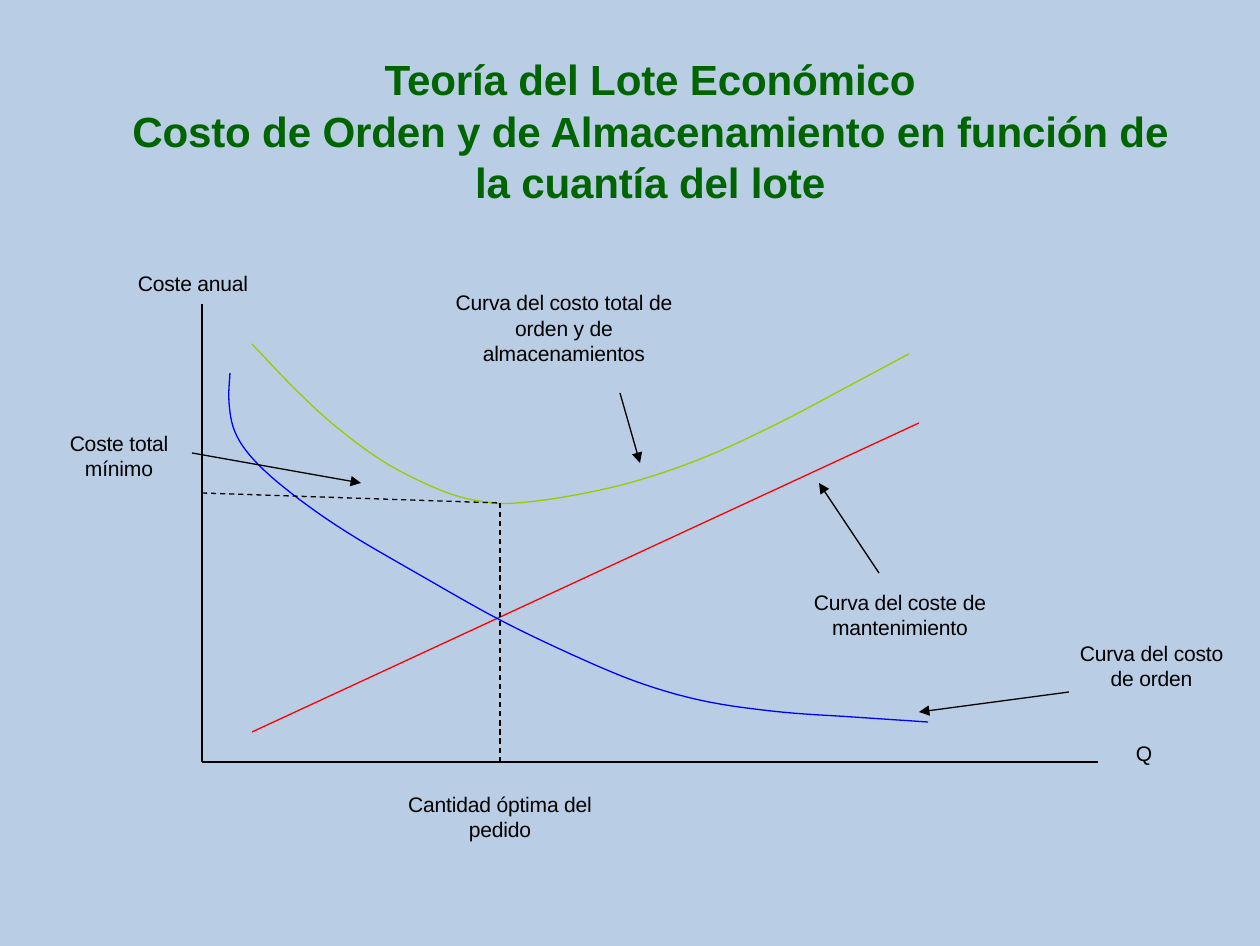
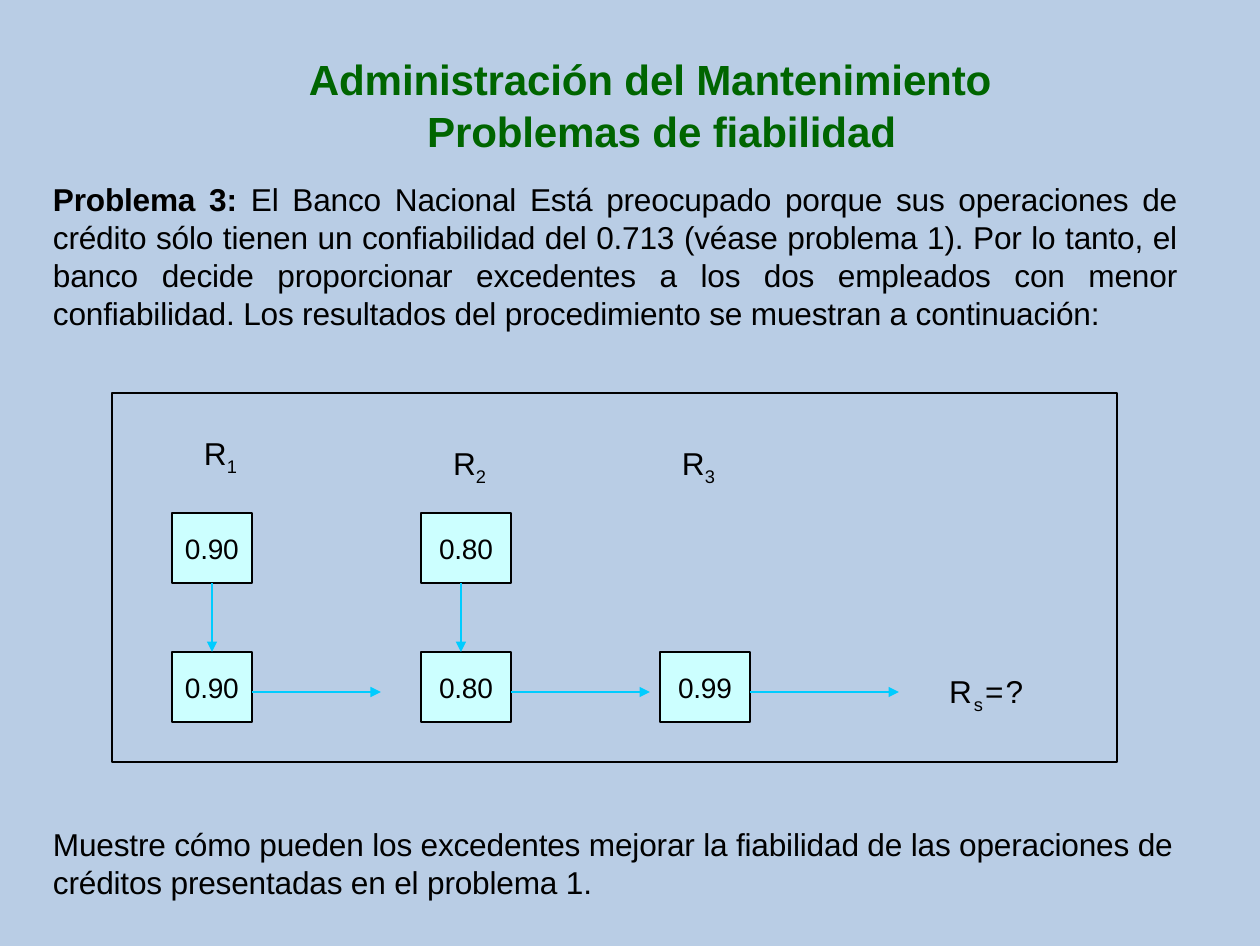
"""Builds two slides: the economic lot cost curves and a reliability problem."""
from lxml.etree import SubElement
from pptx import Presentation
from pptx.dml.color import RGBColor
from pptx.enum.dml import MSO_LINE
from pptx.enum.shapes import MSO_CONNECTOR, MSO_SHAPE
from pptx.enum.text import MSO_ANCHOR, PP_ALIGN
from pptx.oxml.ns import qn
from pptx.util import Pt

PX = 7234
BLACK, GREEN, CYAN = "000000", "006500", "00CCFF"


def write(shape, paragraphs, size, align=PP_ALIGN.CENTER, color=BLACK, tracking=-10):
    frame = shape.text_frame
    frame.word_wrap = True
    frame.vertical_anchor = MSO_ANCHOR.TOP
    frame.margin_left = frame.margin_top = frame.margin_right = frame.margin_bottom = 0
    for index, pieces in enumerate(paragraphs):
        paragraph = frame.add_paragraph() if index else frame.paragraphs[0]
        paragraph.alignment = align
        paragraph.line_spacing = Pt(size * 1.2)
        paragraph.font.name = "Arial"
        paragraph.font.size = Pt(size)
        paragraph.font.color.rgb = RGBColor.from_string(color)
        for piece in pieces:
            run = paragraph.add_run()
            run.text = piece
            run._r.get_or_add_rPr().set("spc", str(tracking))
    return frame


def connect(slide, start, end, color=BLACK, dashed=False, arrow=False):
    ends = [value * PX for value in (*start, *end)]
    connector = slide.shapes.add_connector(MSO_CONNECTOR.STRAIGHT, *ends)
    connector.line.color.rgb = RGBColor.from_string(color)
    connector.line.width = Pt(0.75)
    if dashed:
        connector.line.dash_style = MSO_LINE.DASH
    properties = connector._element.spPr
    if arrow:
        SubElement(properties.find(qn("a:ln")), qn("a:tailEnd"), type="triangle")
    SubElement(properties, qn("a:effectLst"))


presentation = Presentation()
presentation.slide_width, presentation.slide_height = 1260 * PX, 946 * PX
background = presentation.slide_master.background.fill
background.solid()
background.fore_color.rgb = RGBColor.from_string("B9CDE5")

titles = [
    (["Teoría del Lote Económico",
      "Costo de Orden y de Almacenamiento en función de la cuantía del lote"], 0),
    (["Administración del Mantenimiento", "Problemas de fiabilidad"], 23),
]
slides = []
for lines, indent in titles:
    slide = presentation.slides.add_slide(presentation.slide_layouts[5])
    title = slide.shapes.title
    title.left, title.top, title.width, title.height = 115 * PX, 53 * PX, 1070 * PX, 153 * PX
    frame = write(title, [[line] for line in lines], 24, color=GREEN)
    for paragraph in frame.paragraphs:
        paragraph.font.bold = True
    paragraph.space_before = Pt(1)
    paragraph._p.get_or_add_pPr().set("marL", str(indent * PX))
    slides.append(slide)
cost_slide, reliability_slide = slides

connect(cost_slide, (202, 304), (202, 762))
connect(cost_slide, (202, 762), (1098, 762))
connect(cost_slide, (252, 732), (919, 423), "FF0000")

curves = {
    "0000FF": [(230, 373), (229, 402), (235, 432), (254, 460), (291, 493), (345, 531),
               (420, 575), (502, 621), (584, 660), (646, 685), (709, 702), (781, 712),
               (853, 717), (928, 722)],
    "99CC00": [(252, 344), (298, 392), (340, 430), (389, 465), (445, 492), (485, 502),
               (518, 503), (576, 495), (640, 480), (708, 456), (779, 423), (849, 386),
               (909, 354)],
}
STEPS = 6
for color, knots in curves.items():
    padded = [knots[0], *knots, knots[-1]]
    points = []
    for before, start, end, after in zip(padded, padded[1:], padded[2:], padded[3:]):
        for step in range(1, STEPS + 1):
            t = step / STEPS
            points.append([
                round(PX * (b + (c - a) * t / 2 + (2 * a - 5 * b + 4 * c - d) * t**2 / 2
                            + (3 * b - a - 3 * c + d) * t**3 / 2))
                for a, b, c, d in zip(before, start, end, after)
            ])
    builder = cost_slide.shapes.build_freeform(knots[0][0] * PX, knots[0][1] * PX)
    builder.add_line_segments(points, close=False)
    curve = builder.convert_to_shape()
    curve.shadow.inherit = False
    curve.fill.background()
    curve.line.color.rgb = RGBColor.from_string(color)
    curve.line.width = Pt(0.75)

for start, end in [((202, 493), (500, 503)), ((500, 503), (500, 762))]:
    connect(cost_slide, start, end, dashed=True)
for start, end in [((620, 393), (640, 463)), ((192, 453), (361, 483)),
                   ((879, 573), (819, 483)), ((1069, 692), (919, 712))]:
    connect(cost_slide, start, end, arrow=True)

labels = [
    ("Coste anual", 133, 270, 120, 25),
    ("Curva del costo total de orden y de almacenamientos", 449, 290, 230, 76),
    ("Coste total mínimo", 62, 430, 114, 51),
    ("Curva del coste de mantenimiento", 805, 589, 190, 51),
    ("Curva del costo de orden", 1079, 640, 145, 51),
    ("Q", 1129, 740, 30, 25),
    ("Cantidad óptima del pedido", 400, 791, 200, 51),
]
for text, *box in labels:
    label = cost_slide.shapes.add_textbox(*[value * PX for value in box])
    write(label, [[text]], 12)

statement = reliability_slide.shapes.add_textbox(53 * PX, 180 * PX, 1124 * PX, 152 * PX)
frame = write(statement, [[
    "Problema 3: ",
    "El Banco Nacional Está preocupado porque sus operaciones de crédito sólo tienen un "
    "confiabilidad del 0.713 (véase problema 1). Por lo tanto, el banco decide proporcionar "
    "excedentes a los dos empleados con menor confiabilidad. Los resultados del "
    "procedimiento se muestran a continuación:",
]], 18, PP_ALIGN.JUSTIFY)
frame.paragraphs[0].runs[0].font.bold = True
question = reliability_slide.shapes.add_textbox(53 * PX, 825 * PX, 1150 * PX, 76 * PX)
write(question, [[
    "Muestre cómo pueden los excedentes mejorar la fiabilidad de las operaciones de "
    "créditos presentadas en el problema 1.",
]], 18, PP_ALIGN.LEFT)

boxes = [
    ("", 112, 393, 1005, 369),
    ("0.90", 172, 513, 80, 70),
    ("0.90", 172, 652, 80, 70),
    ("0.80", 421, 513, 90, 70),
    ("0.80", 421, 652, 90, 70),
    ("0.99", 660, 652, 90, 70),
]
for value, *box in boxes:
    shape = reliability_slide.shapes.add_shape(
        MSO_SHAPE.RECTANGLE, *[length * PX for length in box])
    shape.shadow.inherit = False
    shape.line.color.rgb = RGBColor.from_string(BLACK)
    shape.line.width = Pt(0.75)
    if value:
        shape.fill.solid()
        shape.fill.fore_color.rgb = RGBColor.from_string("CCFFFF")
        write(shape, [[value]], 16).vertical_anchor = MSO_ANCHOR.MIDDLE
    else:
        shape.fill.background()

symbols = [
    (["R", "1"], 204, 439, -10),
    (["R", "2"], 453, 449, -10),
    (["R", "3"], 682, 449, -10),
    (["R", "s", "=?"], 949, 677, 120),
]
for pieces, left, top, tracking in symbols:
    symbol = reliability_slide.shapes.add_textbox(left * PX, top * PX, 100 * PX, 46 * PX)
    frame = write(symbol, [pieces], 18, PP_ALIGN.LEFT, tracking=tracking)
    frame.paragraphs[0].runs[1]._r.get_or_add_rPr().set("baseline", "-23000")

for start, end in [((252, 692), (381, 692)), ((511, 692), (650, 692)),
                   ((750, 692), (899, 692)), ((212, 583), (212, 652)),
                   ((461, 583), (461, 652))]:
    connect(reliability_slide, start, end, CYAN, arrow=True)

presentation.save("out.pptx")
